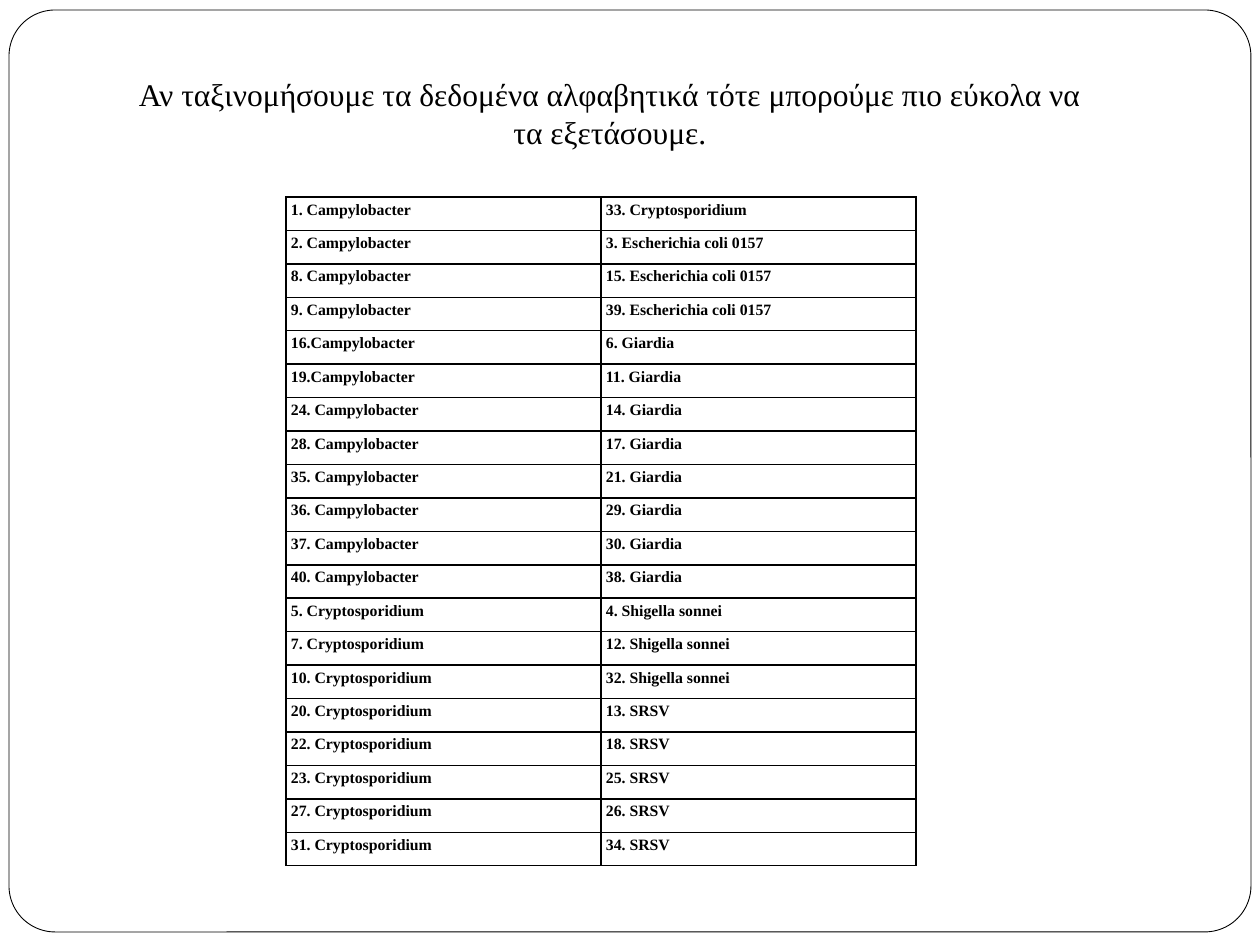
"""Build a slide listing alphabetically sorted laboratory results."""
from lxml import etree
from pptx import Presentation
from pptx import util as u
from pptx.dml.color import RGBColor
from pptx.enum import shapes, text
from pptx.oxml.ns import qn

TITLE = ("Αν ταξινομήσουμε τα δεδομένα αλφαβητικά τότε μπορούμε "
         "πιο εύκολα να τα εξετάσουμε.")
LEFT_RESULTS = [
    "1. Campylobacter", "2. Campylobacter", "8. Campylobacter",
    "9. Campylobacter", "16.Campylobacter", "19.Campylobacter",
    "24. Campylobacter", "28. Campylobacter", "35. Campylobacter",
    "36. Campylobacter", "37. Campylobacter", "40. Campylobacter",
    "5. Cryptosporidium", "7. Cryptosporidium", "10. Cryptosporidium",
    "20. Cryptosporidium", "22. Cryptosporidium", "23. Cryptosporidium",
    "27. Cryptosporidium", "31. Cryptosporidium",
]
RIGHT_RESULTS = [
    "33. Cryptosporidium", "3. Escherichia coli 0157",
    "15. Escherichia coli 0157", "39. Escherichia coli 0157",
    "6. Giardia", "11. Giardia", "14. Giardia", "17. Giardia",
    "21. Giardia", "29. Giardia", "30. Giardia", "38. Giardia",
    "4. Shigella sonnei", "12. Shigella sonnei", "32. Shigella sonnei",
    "13. SRSV", "18. SRSV", "25. SRSV", "26. SRSV", "34. SRSV",
]
COLUMNS = [LEFT_RESULTS, RIGHT_RESULTS]
SLIDE_SIZE = (1260, 945)
FRAME_BOX = (9, 10, 1242, 922)
TITLE_BOX = (108, 69, 1004, 90)
TABLE_BOX = (286, 197, 630, 669)
BLACK, WHITE = "000000", "FFFFFF"
TITLE_FONT = {"name": "Times New Roman", "size": u.Pt(18), "bold": False}
CELL_FONT = {"name": "Times New Roman", "size": u.Pt(9), "bold": True}


def px(length):
    return round(length * u.Inches(1) / 126)


def color(value):
    return RGBColor.from_string(value)


def set_values(target, values):
    for name, value in values.items():
        setattr(target, name, value)


def paint(target, value):
    target.fill.solid()
    target.fill.fore_color.rgb = color(value)


def write(frame, words, font, align):
    para = frame.paragraphs[0]
    para.alignment = align
    span = para.add_run()
    span.text = words
    set_values(span.font, font)
    span.font.color.rgb = color(BLACK)


def add_borders(cell):
    properties = cell._tc.get_or_add_tcPr()
    for position, side in enumerate(("lnL", "lnR", "lnT", "lnB")):
        line = etree.Element(qn(f"a:{side}"), w=str(u.Pt(1)))
        fill = etree.SubElement(line, qn("a:solidFill"))
        etree.SubElement(fill, qn("a:srgbClr"), val=BLACK)
        properties.insert(position, line)


def add_frame(page):
    frame = page.shapes.add_shape(
        shapes.MSO_SHAPE.ROUNDED_RECTANGLE, *map(px, FRAME_BOX))
    frame.adjustments[0] = 0.05
    frame.shadow.inherit = False
    paint(frame, WHITE)
    frame.line.color.rgb = color(BLACK)
    frame.line.width = u.Pt(0.5)
    page.shapes._spTree.insert(2, frame._element)


def add_title(page):
    title = page.shapes.title
    set_values(title, dict(zip(("left", "top", "width", "height"),
                               map(px, TITLE_BOX))))
    set_values(title.text_frame, {
        "word_wrap": True, "vertical_anchor": text.MSO_ANCHOR.TOP,
        "auto_size": text.MSO_AUTO_SIZE.SHAPE_TO_FIT_TEXT})
    write(title.text_frame, TITLE, TITLE_FONT, text.PP_ALIGN.CENTER)


def add_results(page):
    row_count = len(LEFT_RESULTS)
    table = page.shapes.add_table(
        row_count, len(COLUMNS), *map(px, TABLE_BOX)).table
    set_values(table, {"first_row": False, "horz_banding": False})
    for row in table.rows:
        row.height = px(TABLE_BOX[3] / row_count)
    for column_index, results in enumerate(COLUMNS):
        for row_index, result in enumerate(results):
            cell = table.cell(row_index, column_index)
            set_values(cell, {"margin_left": px(5), "margin_right": px(5),
                              "margin_top": px(4), "margin_bottom": px(4)})
            paint(cell, WHITE)
            add_borders(cell)
            write(cell.text_frame, result, CELL_FONT, text.PP_ALIGN.LEFT)


def main():
    deck = Presentation()
    deck.slide_width, deck.slide_height = map(px, SLIDE_SIZE)
    page = deck.slides.add_slide(deck.slide_layouts[5])
    add_frame(page)
    add_title(page)
    add_results(page)
    deck.save("out.pptx")


if __name__ == "__main__":
    main()
